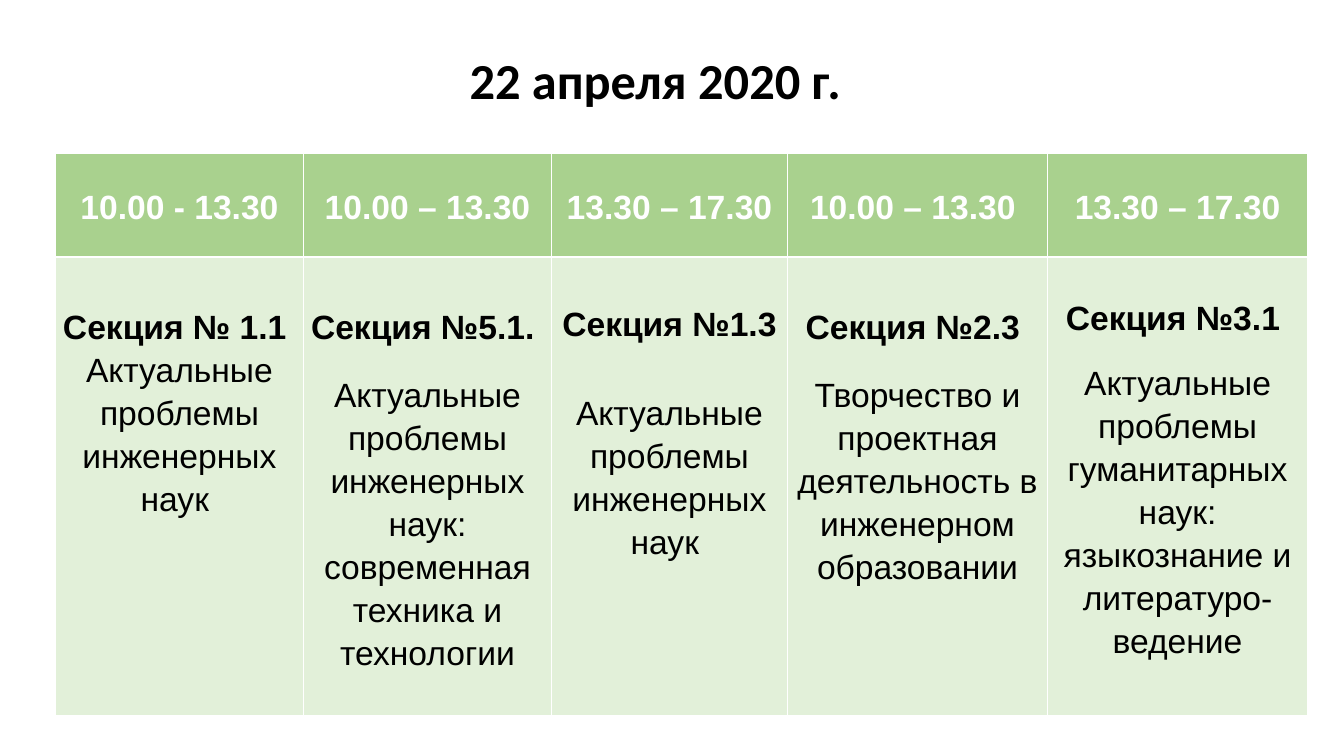
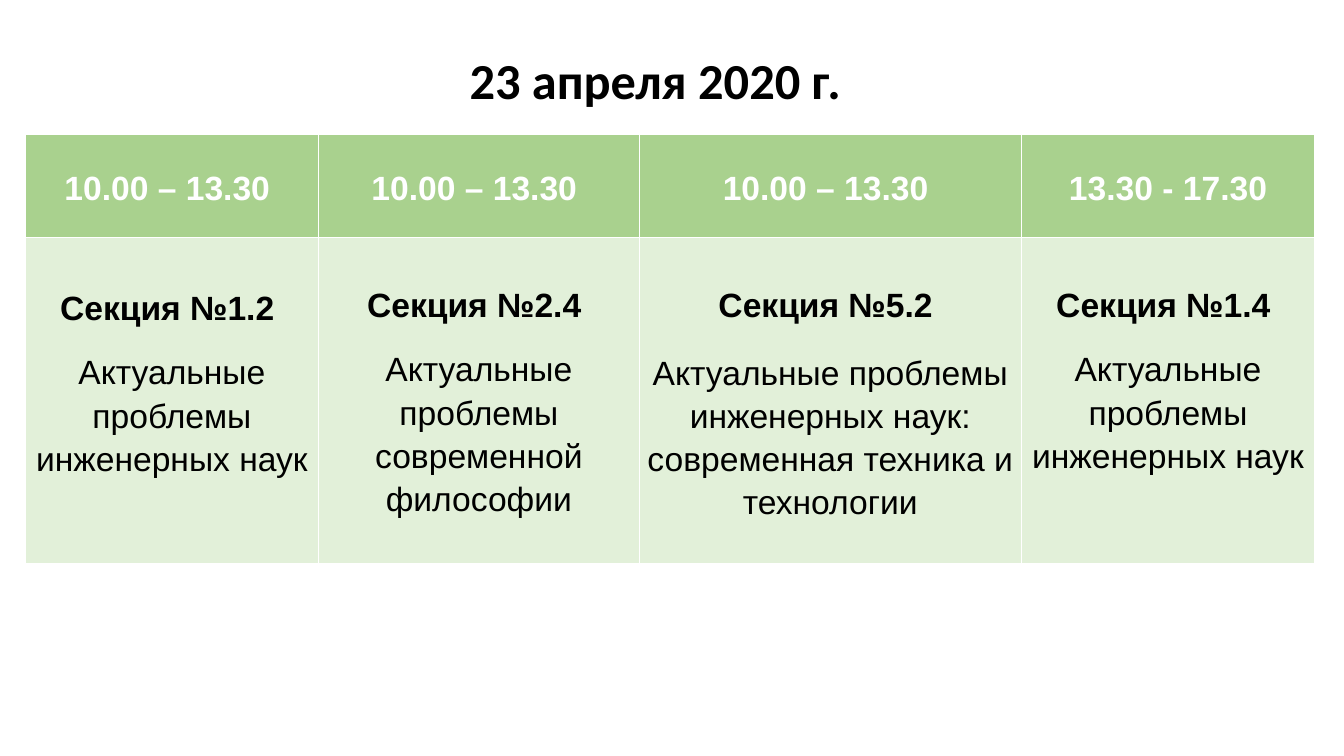
from dataclasses import dataclass

from pptx import Presentation
from pptx.dml.color import RGBColor
from pptx.enum.text import MSO_ANCHOR, MSO_AUTO_SIZE, PP_ALIGN
from pptx.util import Inches, Pt

CENTER = PP_ALIGN.CENTER
TOP = MSO_ANCHOR.TOP
MIDDLE = MSO_ANCHOR.MIDDLE
NO_AUTOFIT = MSO_AUTO_SIZE.NONE
TITLE_ONLY = 5

BLACK = "000000"
WHITE = "FFFFFF"
HEADER_GREEN = "A9D18E"
BODY_GREEN = "E2F0D9"
TITLE_FONT = "Calibri"
TABLE_FONT = "Arial"
HEADER_HEIGHT = 1.03
CELL_SIDE_MARGIN = 0.07


@dataclass
class Section:
    """One table column; top is in inches, gap (before the topic) in points."""
    time: str
    heading: str
    topic: str
    width: float
    top: float
    gap: float


@dataclass
class Day:
    date: str
    left: float
    top: float
    body_height: float
    sections: list[Section]


ENGINEERING = "Актуальные проблемы инженерных наук"
TECHNOLOGY = ENGINEERING + ": современная техника и технологии"

DAYS = [
    Day("22 апреля 2020 г.", 0.55, 1.52, 4.55, [
        Section("10.00 - 13.30", "Секция № 1.1 ", ENGINEERING + " ", 2.46, 0.46, 0),
        Section("10.00 – 13.30", "Секция №5.1. ", TECHNOLOGY, 2.46, 0.46, 18),
        Section("13.30 – 17.30", "Секция №1.3 ", ENGINEERING + " ", 2.34, 0.43, 33),
        Section("10.00 – 13.30 ", "Секция №2.3 ",
                "Творчество и проектная деятельность в инженерном образовании",
                2.58, 0.46, 18),
        Section("13.30 – 17.30", "Секция №3.1 ",
                "Актуальные проблемы гуманитарных наук: языкознание и литературо-ведение",
                2.58, 0.37, 15.5),
    ]),
    Day("23 апреля 2020 г.", 0.25, 1.33, 3.23, [
        Section("10.00 – 13.30 ", "Секция №1.2 ", ENGINEERING + " ", 2.91, 0.46, 15.5),
        Section("10.00 – 13.30 ", "Секция №2.4 ",
                "Актуальные проблемы современной философии", 3.18, 0.43, 15.5),
        Section("10.00 – 13.30 ", "Секция №5.2 ", TECHNOLOGY, 3.79, 0.43, 18),
        Section("13.30 - 17.30", "Секция №1.4 ", ENGINEERING, 2.91, 0.43, 15.5),
    ]),
]


def rgb(color: str) -> RGBColor:
    return RGBColor.from_string(color)


def write(paragraph, text: str, color: str, bold: bool = True, size: float = 24,
          font: str = TABLE_FONT, line_spacing: float = 1.15, gap: float = 0) -> None:
    paragraph.text = text
    paragraph.alignment = CENTER
    paragraph.line_spacing = line_spacing
    paragraph.space_before = Pt(gap)
    paragraph.font.name = font
    paragraph.font.size = Pt(size)
    paragraph.font.bold = bold
    paragraph.font.color.rgb = rgb(color)


def format_cell(cell, color: str, anchor, top: float = 0) -> None:
    cell.fill.solid()
    cell.fill.fore_color.rgb = rgb(color)
    cell.vertical_anchor = anchor
    cell.margin_left = cell.margin_right = Inches(CELL_SIDE_MARGIN)
    cell.margin_top = Inches(top)
    cell.margin_bottom = 0


def add_title(slide, date: str) -> None:
    title = slide.shapes.title
    title.left, title.top = Inches(1.5), Inches(0.51)
    title.width, title.height = Inches(10), Inches(0.74)
    frame = title.text_frame
    frame.auto_size = NO_AUTOFIT
    frame.vertical_anchor = TOP
    write(frame.paragraphs[0], date, BLACK, size=36, font=TITLE_FONT, line_spacing=0.9)


def add_schedule(slide, day: Day) -> None:
    width = sum(section.width for section in day.sections)
    schedule = slide.shapes.add_table(
        2, len(day.sections), Inches(day.left), Inches(day.top),
        Inches(width), Inches(HEADER_HEIGHT + day.body_height)).table
    schedule.horz_banding = False
    schedule.rows[0].height = Inches(HEADER_HEIGHT)
    schedule.rows[1].height = Inches(day.body_height)

    for column, section in enumerate(day.sections):
        schedule.columns[column].width = Inches(section.width)
        time_cell = schedule.cell(0, column)
        format_cell(time_cell, HEADER_GREEN, MIDDLE)
        write(time_cell.text_frame.paragraphs[0], section.time, WHITE)

        section_cell = schedule.cell(1, column)
        format_cell(section_cell, BODY_GREEN, TOP, section.top)
        section_text = section_cell.text_frame
        write(section_text.paragraphs[0], section.heading, BLACK)
        write(section_text.add_paragraph(), section.topic, BLACK,
              bold=False, gap=section.gap)


def main() -> None:
    presentation = Presentation()
    presentation.slide_width = Inches(13.33)
    presentation.slide_height = Inches(7.5)
    for day in DAYS:
        slide = presentation.slides.add_slide(presentation.slide_layouts[TITLE_ONLY])
        add_title(slide, day.date)
        add_schedule(slide, day)
    presentation.save("out.pptx")


if __name__ == "__main__":
    main()
